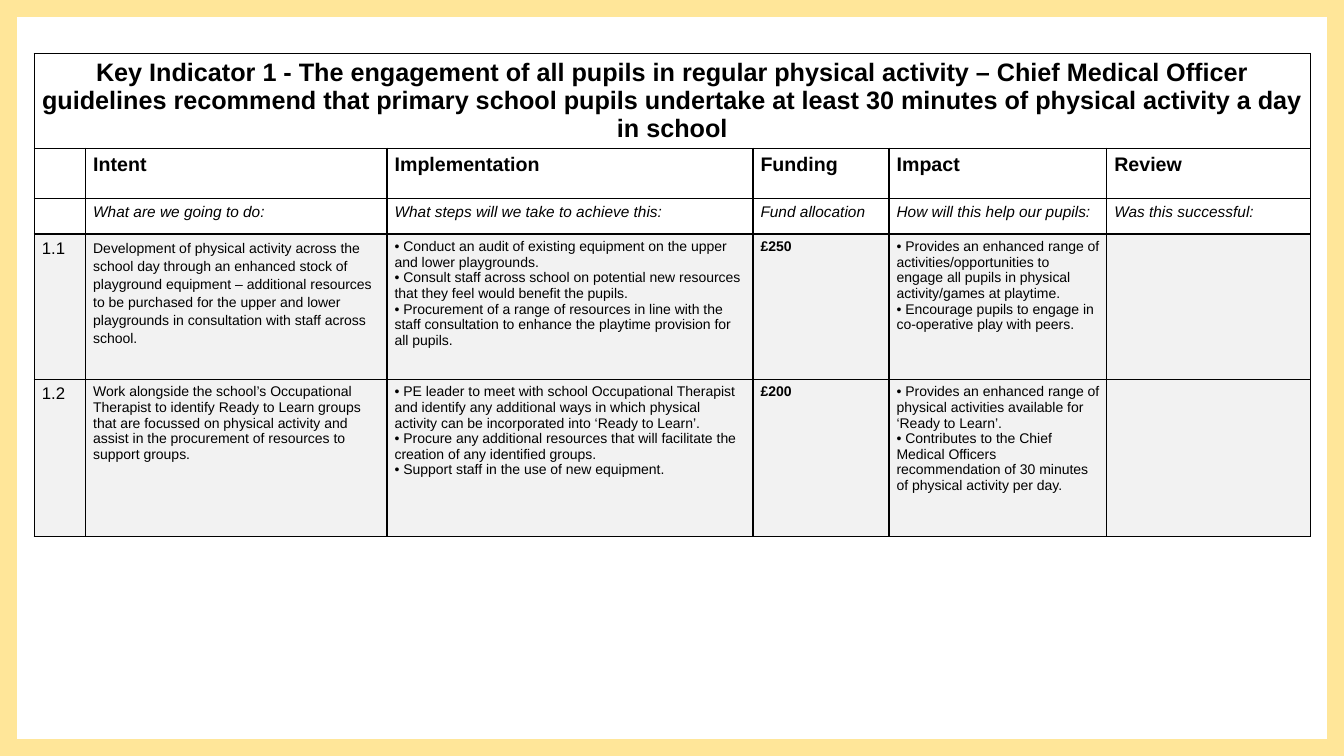
from lxml.etree import SubElement
from pptx import Presentation
from pptx.dml.color import RGBColor
from pptx.enum.shapes import MSO_SHAPE as SHAPE
from pptx.enum.text import PP_ALIGN as ALIGN
from pptx.oxml.ns import qn
from pptx.util import Pt

COLORS = {"text": "000000", "border": "000000", "entry": "F2F2F2", "frame": "FFE699"}
FONT = "Arial"
COL_WIDTHS = [36.7, 215.3, 261.4, 97.2, 155.5, 145.4]
ROW_HEIGHTS = [36, 36, 25.2, 103.7, 112.3]

TITLE = ("Key Indicator 1 - The engagement of all pupils in regular physical activity – "
         "Chief Medical Officer guidelines recommend that primary school pupils undertake "
         "at least 30 minutes of physical activity a day in school")
ROWS = [
    [TITLE],
    ["", "Intent", "Implementation", "Funding", "Impact", "Review"],
    ["", "What are we going to do:", "What steps will we take to achieve this:",
     "Fund allocation", "How will this help our pupils:", "Was this successful:"],
    ["1.1",
     "Development of physical activity across the school day through an enhanced stock of "
     "playground equipment – additional resources to be purchased for the upper and lower "
     "playgrounds in consultation with staff across school.",
     "• Conduct an audit of existing equipment on the upper and lower playgrounds.\n"
     "• Consult staff across school on potential new resources that they feel would benefit "
     "the pupils.\n"
     "• Procurement of a range of resources in line with the staff consultation to enhance "
     "the playtime provision for all pupils.",
     "£250",
     "• Provides an enhanced range of activities/opportunities to engage all pupils in "
     "physical activity/games at playtime.\n"
     "• Encourage pupils to engage in co-operative play with peers.",
     ""],
    ["1.2",
     "Work alongside the school’s Occupational Therapist to identify Ready to Learn groups "
     "that are focussed on physical activity and assist in the procurement of resources to "
     "support groups.",
     "• PE leader to meet with school Occupational Therapist and identify any additional ways "
     "in which physical activity can be incorporated into ‘Ready to Learn’.\n"
     "• Procure any additional resources that will facilitate the creation of any identified "
     "groups.\n"
     "• Support staff in the use of new equipment.",
     "£200",
     "• Provides an enhanced range of physical activities available for ‘Ready to Learn’.\n"
     "• Contributes to the Chief Medical Officers recommendation of 30 minutes of physical "
     "activity per day.",
     ""],
]
ROW_SIZES = [18, 14, 11, 10, 10]
NUMBER_COL, FUNDING_COL = 0, 3
FIRST_ENTRY = 3


def add_borders(cell):
    tc_pr = cell._tc.get_or_add_tcPr()
    for i, side in enumerate(("lnL", "lnR", "lnT", "lnB")):
        ln = tc_pr.makeelement(qn(f"a:{side}"), {"w": str(Pt(1))})
        fill = SubElement(ln, qn("a:solidFill"))
        SubElement(fill, qn("a:srgbClr"), val=COLORS["border"])
        tc_pr.insert(i, ln)


prs = Presentation()
prs.slide_width, prs.slide_height = Pt(960), Pt(540)
slide = prs.slides.add_slide(prs.slide_layouts[6])

# Indicator table
table_frame = slide.shapes.add_table(len(ROWS), len(COL_WIDTHS), Pt(24.5), Pt(38.2),
                                     Pt(sum(COL_WIDTHS)), Pt(350))
table = table_frame.table
table.first_row = False
table.horz_banding = False
for col, width in zip(table.columns, COL_WIDTHS):
    col.width = Pt(width)
for row, height in zip(table.rows, ROW_HEIGHTS):
    row.height = Pt(height)
table_frame.height = Pt(350)
table.cell(0, 0).merge(table.cell(0, len(COL_WIDTHS) - 1))

for i, row in enumerate(table.rows):
    is_entry = i >= FIRST_ENTRY
    for j, cell in enumerate(row.cells):
        if is_entry:
            cell.fill.solid()
            cell.fill.fore_color.rgb = RGBColor.from_string(COLORS["entry"])
        else:
            cell.fill.background()
        add_borders(cell)
        cell.margin_left = cell.margin_right = Pt(5.4)
        cell.margin_top = cell.margin_bottom = Pt(3.6)
        text = ROWS[i][j] if j < len(ROWS[i]) else ""
        size = 12 if is_entry and j == NUMBER_COL else ROW_SIZES[i]
        if not text:
            SubElement(cell.text_frame.paragraphs[0]._p, qn("a:endParaRPr"), sz=str(size * 100))
            continue
        cell.text_frame.text = text
        for p in cell.text_frame.paragraphs:
            for r in p.runs:
                r.font.name = FONT
                r.font.size = Pt(size)
                r.font.bold = i < 2 or (is_entry and j == FUNDING_COL)
                r.font.italic = i == 2
                r.font.color.rgb = RGBColor.from_string(COLORS["text"])

table.cell(0, 0).text_frame.paragraphs[0].alignment = ALIGN.CENTER
table.cell(FIRST_ENTRY, 1).text_frame.paragraphs[0].line_spacing = Pt(12.8)

# Slide border
border = slide.shapes.add_shape(SHAPE.FRAME, 0, 0, prs.slide_width, prs.slide_height)
border.adjustments[0] = 0.022
border.shadow.inherit = False
border.fill.solid()
border.fill.fore_color.rgb = RGBColor.from_string(COLORS["frame"])
border.line.color.rgb = RGBColor.from_string(COLORS["frame"])
border.line.width = Pt(1)

prs.save("out.pptx")
